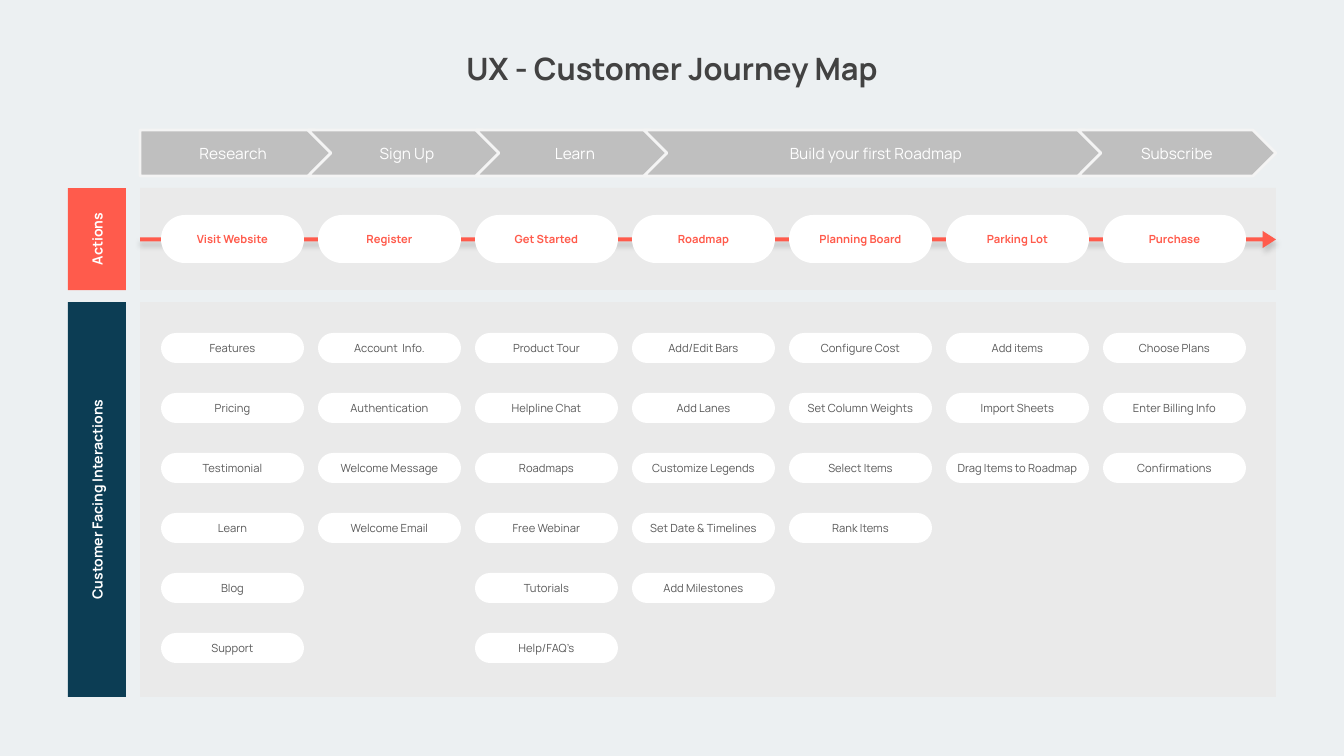
from dataclasses import dataclass

from lxml import etree
from pptx import Presentation
from pptx.dml.color import RGBColor
from pptx.enum.shapes import MSO_SHAPE as Shape
from pptx.enum.text import MSO_ANCHOR as Anchor, PP_ALIGN as Align
from pptx.oxml import parse_xml
from pptx.oxml.ns import nsdecls, qn
from pptx.util import Emu, Pt

FONT = "Manrope"
COLORS = {
    "background": "ECF0F2",
    "title": "424242",
    "panel": "EAEAEA",
    "phase": "BFBFBF",
    "phase_line": "F4F4F4",
    "coral": "FF5B4C",
    "navy": "0C3D54",
    "white": "FFFFFF",
    "item": "595959",
}

# Grid in px
SLIDE_W, SLIDE_H = 1344, 756
PANEL_X, PANEL_W = 140, 1136
LABEL_X, LABEL_W = 68, 58
PHASE_Y, PHASE_H, PHASE_OVERLAP = 130, 46, 30
PILL_X, PILL_W, PILL_PITCH = 161, 143, 157
ACTION_Y, ACTION_H = 215, 48
ITEM_Y, ITEM_H, ITEM_PITCH = 333, 30, 60
ARROW_Y, ARROW_H = 231, 17


@dataclass
class Phase:
    name: str
    width: int = 198


@dataclass
class Lane:
    name: str
    top: int
    height: int
    color: str


@dataclass
class Step:
    action: str
    items: list[str]


PHASES = [
    Phase("Research"),
    Phase("Sign Up"),
    Phase("Learn"),
    Phase("Build your first Roadmap", 464),
    Phase("Subscribe"),
]
LANES = [
    Lane("Actions", 188, 102, "coral"),
    Lane("Customer Facing Interactions", 302, 395, "navy"),
]
STEPS = [
    Step("Visit Website", ["Features", "Pricing", "Testimonial", "Learn", "Blog", "Support"]),
    Step("Register", ["Account  Info.", "Authentication", "Welcome Message", "Welcome Email"]),
    Step("Get Started", ["Product Tour", "Helpline Chat", "Roadmaps", "Free Webinar",
                         "Tutorials", "Help/FAQ’s"]),
    Step("Roadmap", ["Add/Edit Bars", "Add Lanes", "Customize Legends",
                     "Set Date & Timelines", "Add Milestones"]),
    Step("Planning Board", ["Configure Cost", "Set Column Weights", "Select Items", "Rank Items"]),
    Step("Parking Lot", ["Add items", "Import Sheets", "Drag Items to Roadmap"]),
    Step("Purchase", ["Choose Plans", "Enter Billing Info", "Confirmations"]),
]


def px(n: float) -> Emu:
    return Emu(round(n * 914400 / 100.8))


def rgb(name: str) -> RGBColor:
    return RGBColor.from_string(COLORS[name])


def add_box(s, kind, x: float, y: float, w: int, h: int, fill: str):
    sp = s.shapes.add_shape(kind, px(x), px(y), px(w), px(h))
    sp.shadow.inherit = False
    sp.fill.solid()
    sp.fill.fore_color.rgb = rgb(fill)
    sp.line.fill.background()
    return sp


def set_text(sp, text: str, size: int, color: str, bold: bool = False) -> None:
    tf = sp.text_frame
    tf.word_wrap = True
    tf.vertical_anchor = Anchor.MIDDLE
    tf.margin_left = tf.margin_right = tf.margin_top = tf.margin_bottom = 0
    p = tf.paragraphs[0]
    p.text = text
    p.alignment = Align.CENTER
    p.font.name = FONT
    p.font.size = Pt(size)
    p.font.bold = bold
    p.font.color.rgb = rgb(color)


def add_pill(s, column: int, y: int, h: int, text: str, color: str, bold: bool) -> None:
    x = PILL_X + column * PILL_PITCH
    sp = add_box(s, Shape.ROUNDED_RECTANGLE, x, y, PILL_W, h, "white")
    sp.adjustments[0] = 0.5
    set_text(sp, text, 8, color, bold)


def add_title(s) -> None:
    title = s.shapes.title
    title.left, title.top, title.width, title.height = px(429), px(39), px(486), px(58)
    set_text(title, "UX - Customer Journey Map", 22, "title", True)


def add_phases(s) -> None:
    x = PANEL_X
    for i, phase in enumerate(PHASES):
        kind = Shape.CHEVRON if i else Shape.PENTAGON
        sp = add_box(s, kind, x, PHASE_Y, phase.width, PHASE_H, "phase")
        sp.adjustments[0] = 0.5
        sp.line.color.rgb = rgb("phase_line")
        sp.line.width = Pt(2)
        set_text(sp, phase.name, 11, "white")
        x += phase.width - PHASE_OVERLAP


def add_lane(s, lane: Lane) -> None:
    add_box(s, Shape.RECTANGLE, PANEL_X, lane.top, PANEL_W, lane.height, "panel")
    # The label is laid out flat, then turned about its centre
    shift = (lane.height - LABEL_W) / 2
    sp = add_box(s, Shape.RECTANGLE, LABEL_X - shift, lane.top + shift,
                 lane.height, LABEL_W, lane.color)
    sp.rotation = 270
    set_text(sp, lane.name, 10, "white", True)


def add_arrow(s) -> None:
    sp = add_box(s, Shape.RIGHT_ARROW, PANEL_X, ARROW_Y, PANEL_W, ARROW_H, "coral")
    sp.adjustments[0] = 0.24
    sp.adjustments[1] = 0.78
    effects = sp._element.spPr.find(qn("a:effectLst"))
    shadow = parse_xml(
        f'<a:outerShdw {nsdecls("a")} blurRad="{Pt(4)}" dist="{Pt(3)}" dir="5400000" '
        'algn="t" rotWithShape="0"/>')
    black = etree.SubElement(shadow, qn("a:srgbClr"), val="000000")
    etree.SubElement(black, qn("a:alpha"), val="16000")
    effects.append(shadow)


def main() -> None:
    prs = Presentation()
    prs.slide_width, prs.slide_height = px(SLIDE_W), px(SLIDE_H)
    s = prs.slides.add_slide(prs.slide_layouts[5])
    s.background.fill.solid()
    s.background.fill.fore_color.rgb = rgb("background")

    # Title and journey phases
    add_title(s)
    add_phases(s)

    # Lanes with their side labels
    for lane in LANES:
        add_lane(s, lane)

    # Actions along the arrow, interactions below each
    add_arrow(s)
    for column, step in enumerate(STEPS):
        add_pill(s, column, ACTION_Y, ACTION_H, step.action, "coral", True)
        for row, item in enumerate(step.items):
            add_pill(s, column, ITEM_Y + row * ITEM_PITCH, ITEM_H, item, "item", False)

    prs.save("out.pptx")


if __name__ == "__main__":
    main()
